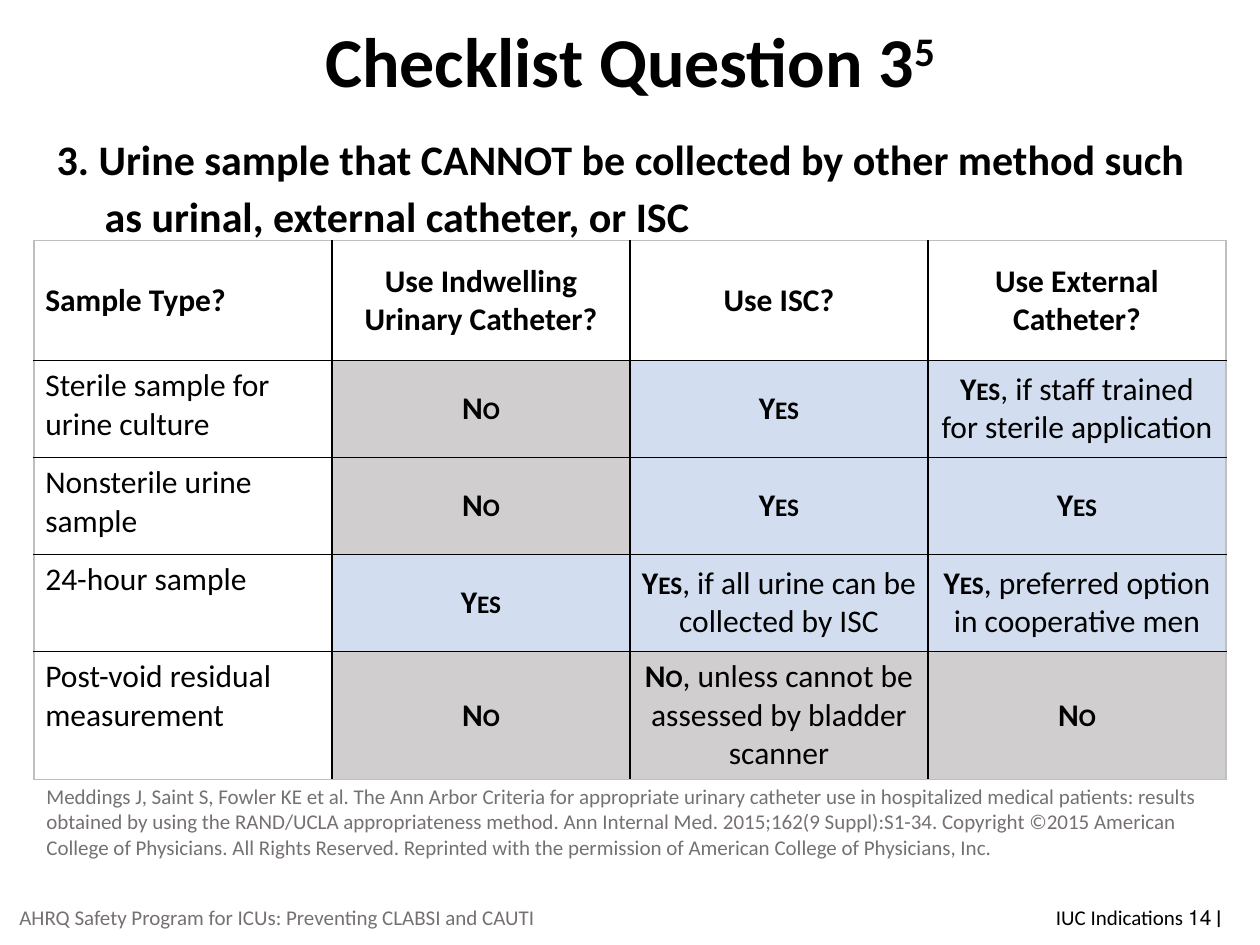
from lxml import etree
from pptx import Presentation
from pptx.dml.color import RGBColor
from pptx.enum.text import MSO_ANCHOR, MSO_AUTO_SIZE, PP_ALIGN
from pptx.oxml.ns import qn
from pptx.util import Inches, Pt

MIDDLE, TOP = MSO_ANCHOR.MIDDLE, MSO_ANCHOR.TOP
LEFT, CENTER, RIGHT = PP_ALIGN.LEFT, PP_ALIGN.CENTER, PP_ALIGN.RIGHT
COLORS = {"black": "000000", "white": "FFFFFF", "gray": "767171",
          "edge": "BFBFBF", "no": "D0CECE", "yes": "D2DEEF"}


def style(run, size, color="black", bold=False, face="Calibri"):
    run.font.size = Pt(size)
    run.font.name = face
    run.font.bold = bold
    run.font.color.rgb = RGBColor.from_string(COLORS[color])


def border(cell, side, color):
    line = etree.SubElement(cell._tc.get_or_add_tcPr(), qn("a:" + side), w=str(Pt(1)))
    fill = etree.SubElement(line, qn("a:solidFill"))
    etree.SubElement(fill, qn("a:srgbClr"), val=COLORS[color])


deck = Presentation()
deck.slide_width, deck.slide_height = Inches(10), Inches(7.5)
slide = deck.slides.add_slide(deck.slide_layouts[1])

# Title with raised reference number
title = slide.shapes.title
title.left, title.top = Inches(0.69), Inches(0.01)
title.width, title.height = Inches(8.62), Inches(0.89)
frame = title.text_frame
frame.auto_size = MSO_AUTO_SIZE.NONE
frame.vertical_anchor = MIDDLE
para = frame.paragraphs[0]
para.alignment = CENTER
para.line_spacing = 1.05
for text in ("Checklist Question 3", "5"):
    run = para.add_run()
    run.text = text
    style(run, 40, bold=True)
run.font._element.set("baseline", "30000")

# Question
body = slide.placeholders[1]
body.left, body.top = Inches(0.35), Inches(0.95)
body.width, body.height = Inches(9.38), Inches(5.53)
frame = body.text_frame
frame.auto_size = MSO_AUTO_SIZE.NONE
para = frame.paragraphs[0]
para.text = ("3. Urine sample that CANNOT be collected by other method such "
             "as urinal, external catheter, or ISC")
props = para._p.get_or_add_pPr()
props.set("marL", str(Inches(0.38)))
props.set("indent", str(Inches(-0.38)))
etree.SubElement(props, qn("a:buNone"))
para.line_spacing = 1.14
para.space_before = Pt(0)
style(para.runs[0], 24, bold=True)

# Table: each answer is a verdict and an optional condition
rows = [
    ["Sample Type?", "Use Indwelling Urinary Catheter?", "Use ISC?",
     "Use External Catheter?"],
    ["Sterile sample for urine culture", "No", "Yes",
     "Yes, if staff trained for sterile application"],
    ["Nonsterile urine sample", "No", "Yes", "Yes"],
    ["24-hour sample", "Yes", "Yes, if all urine can be collected by ISC",
     "Yes, preferred option in cooperative men"],
    ["Post-void residual measurement", "No",
     "No, unless cannot be assessed by bladder scanner", "No"],
]
last_row, last_col = len(rows) - 1, len(rows[0]) - 1
table = slide.shapes.add_table(len(rows), len(rows[0]), Inches(0.27), Inches(1.91),
                               Inches(9.46), Inches(4.03)).table
table.first_row = table.horz_banding = False
for r, row in enumerate(rows):
    table.rows[r].height = Inches(0.77 if r else 0.95)
    for c, text in enumerate(row):
        cell = table.cell(r, c)
        answer = r > 0 and c > 0
        cell.margin_left = cell.margin_right = Inches(0.09)
        cell.margin_top = cell.margin_bottom = Inches(0.05)
        cell.vertical_anchor = TOP if r and not c else MIDDLE
        for side, outer in (("lnL", c == 0), ("lnR", c == last_col),
                            ("lnT", r == 0), ("lnB", r == last_row)):
            border(cell, side, "edge" if outer else "black")
        verdict, comma, rest = text.partition(",")
        cell.fill.solid()
        shade = verdict.lower() if answer else "white"
        cell.fill.fore_color.rgb = RGBColor.from_string(COLORS[shade])
        para = cell.text_frame.paragraphs[0]
        para.alignment = CENTER if c else LEFT
        run = para.add_run()
        run.text = verdict
        style(run, 18, bold=answer or r == 0)
        if answer:
            run.font._element.set("cap", "small")
        if rest:
            run = para.add_run()
            run.text = comma + rest
            style(run, 18)

# Citation and footers
notes = [
    (0.27, 6.17, 9.46, 0.71, TOP, LEFT, "gray", [
        ("Meddings J, Saint S, Fowler KE et al. The Ann Arbor Criteria for appropriate "
         "urinary catheter use in hospitalized medical patients: results obtained by "
         "using the RAND/UCLA appropriateness method. Ann Internal Med. 2015;162(9 "
         "Suppl):S1-34. Copyright ©2015 American College of Physicians. All Rights "
         "Reserved. Reprinted with the permission of American College of Physicians, "
         "Inc.", "Calibri")]),
    (0, 7.08, 4.4, 0.4, MIDDLE, CENTER, "gray", [
        ("AHRQ Safety Program for ICUs: Preventing CLABSI and CAUTI", "Calibri")]),
    (7.54, 7.08, 2.25, 0.4, MIDDLE, RIGHT, "black", [
        ("IUC Indications ", "Calibri"), ("׀ ", "Lato"), ("14", "Calibri")]),
]
for x, y, w, h, anchor, align, color, parts in notes:
    frame = slide.shapes.add_textbox(Inches(x), Inches(y), Inches(w), Inches(h)).text_frame
    frame.word_wrap = True
    frame.vertical_anchor = anchor
    para = frame.paragraphs[0]
    para.alignment = align
    for text, face in parts:
        run = para.add_run()
        run.text = text
        style(run, 12, color, face=face)

deck.save("out.pptx")
